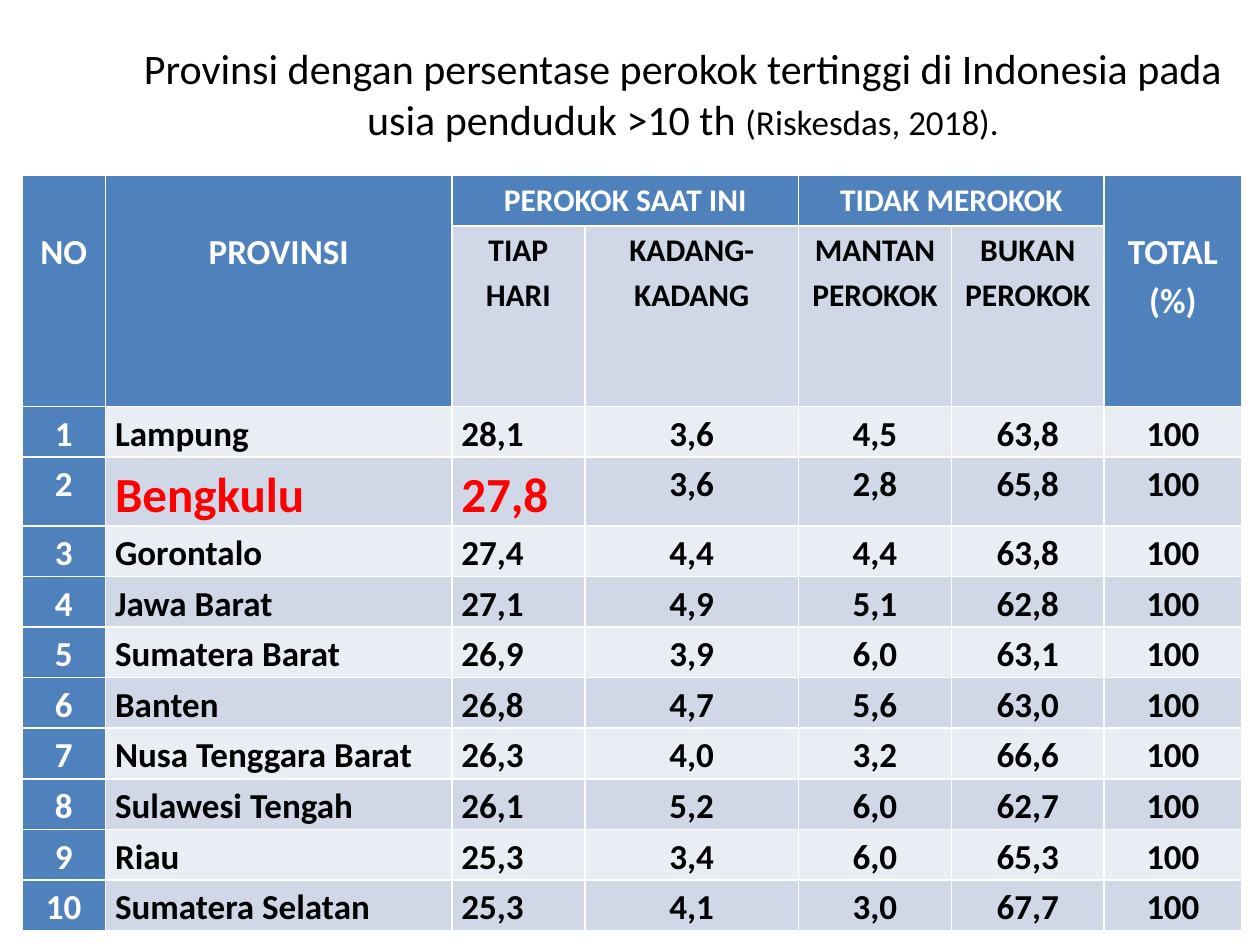
from lxml.etree import SubElement
from pptx import Presentation
from pptx.dml.color import RGBColor as RGB
from pptx.enum.text import MSO_ANCHOR as Anchor, MSO_AUTO_SIZE as Fit, PP_ALIGN as Align
from pptx.oxml.ns import qn
from pptx.util import Cm, Pt

FONT = "Calibri"
HUES = {"head": "4F81BD", "dark": "D0D8E8", "light": "E9EDF4",
        "white": "FFFFFF", "black": "000000", "red": "FF0000"}
TITLE = [("Provinsi dengan persentase perokok tertinggi di Indonesia pada "
          "usia penduduk >10 th ", 24), ("(Riskesdas, 2018).", 20)]
TALL = [(0, "NO"), (1, "PROVINSI"), (6, "TOTAL\n(%)")]
GROUPS = [(2, "PEROKOK SAAT INI"), (4, "TIDAK MEROKOK")]
HEADS = ["TIAP HARI", "KADANG-KADANG", "MANTAN PEROKOK", "BUKAN PEROKOK"]
DATA = [
    ("Lampung", "28,1", "3,6", "4,5", "63,8"),
    ("Bengkulu", "27,8", "3,6", "2,8", "65,8"),
    ("Gorontalo", "27,4", "4,4", "4,4", "63,8"),
    ("Jawa Barat", "27,1", "4,9", "5,1", "62,8"),
    ("Sumatera Barat", "26,9", "3,9", "6,0", "63,1"),
    ("Banten", "26,8", "4,7", "5,6", "63,0"),
    ("Nusa Tenggara Barat", "26,3", "4,0", "3,2", "66,6"),
    ("Sulawesi Tengah", "26,1", "5,2", "6,0", "62,7"),
    ("Riau", "25,3", "3,4", "6,0", "65,3"),
    ("Sumatera Selatan", "25,3", "4,1", "3,0", "67,7"),
]
TOTAL = "100"
STAR = "Bengkulu"
WIDTHS = [1.69, 6.98, 2.68, 4.31, 3.08, 3.08, 2.77]
ROW, HIGH, SUB = 1.02, 1.22, 3.63
LINE = 0.99


def tint(name):
    return RGB.from_string(HUES[name])


def edge(cell):
    props = cell._tc.get_or_add_tcPr()
    for spot, side in enumerate(("lnL", "lnR", "lnT", "lnB")):
        line = SubElement(props, qn(f"a:{side}"), w=str(Pt(1)))
        fill = SubElement(line, qn("a:solidFill"))
        SubElement(fill, qn("a:srgbClr"), val=HUES["white"])
        props.insert(spot, line)


def write(cell, text, fill, size=20, hue="black", align=Align.CENTER):
    cell.text = text
    for para in cell.text_frame.paragraphs:
        para.alignment = align
        para.line_spacing = 1.15
        font = para.font
        font.name, font.size, font.bold = FONT, Pt(size), True
        font.color.rgb = tint(hue)
    cell.fill.solid()
    cell.fill.fore_color.rgb = tint(fill)


def add_title(slide):
    title = slide.shapes.title
    title.left, title.top = Cm(2.34), Cm(0.86)
    title.width, title.height = Cm(22.86), Cm(3.99)
    frame = title.text_frame
    frame.auto_size, frame.word_wrap = Fit.NONE, True
    frame.vertical_anchor, frame.margin_top = Anchor.TOP, 0
    para = frame.paragraphs[0]
    para.alignment = Align.CENTER
    para.font.name = FONT
    para.font.color.rgb = tint("black")
    for text, size in TITLE:
        run = para.add_run()
        run.text, run.font.size = text, Pt(size)


def add_grid(slide):
    highs = [ROW, SUB] + [HIGH if row[0] == STAR else ROW for row in DATA]
    grid = slide.shapes.add_table(
        len(highs), len(WIDTHS), Cm(0.44), Cm(3.54),
        Cm(sum(WIDTHS)), Cm(sum(highs))).table
    grid.first_row = grid.horz_banding = False
    for col, wide in zip(grid.columns, WIDTHS):
        col.width = Cm(wide)
    for row, high in zip(grid.rows, highs):
        row.height = Cm(high)
    for cell in grid.iter_cells():
        cell.margin_left = cell.margin_right = Cm(0.19)
        cell.margin_top = cell.margin_bottom = 0
        edge(cell)
    for col, text in TALL:
        cell = grid.cell(0, col)
        cell.merge(grid.cell(1, col))
        write(cell, text, "head", hue="white")
        cell.margin_top = Cm(LINE)
    for col, text in GROUPS:
        cell = grid.cell(0, col)
        cell.merge(grid.cell(0, col + 1))
        write(cell, text, "head", 18, "white")
    for col, text in enumerate(HEADS, 2):
        write(grid.cell(1, col), text, "dark", 18)
    for num, row in enumerate(DATA, 1):
        band = "light" if num % 2 else "dark"
        write(grid.cell(num + 1, 0), str(num), "head", hue="white")
        size, hue = (28, "red") if row[0] == STAR else (20, "black")
        for col, text in enumerate((*row, TOTAL), 1):
            cell = grid.cell(num + 1, col)
            if col < 3:
                write(cell, text, band, size, hue, Align.LEFT)
            else:
                write(cell, text, band)


def main():
    """Build the slide on smoking rates by province."""
    deck = Presentation()
    deck.slide_width, deck.slide_height = Cm(25.4), Cm(19.05)
    slide = deck.slides.add_slide(deck.slide_layouts[5])
    add_title(slide)
    add_grid(slide)
    deck.save("out.pptx")


if __name__ == "__main__":
    main()
